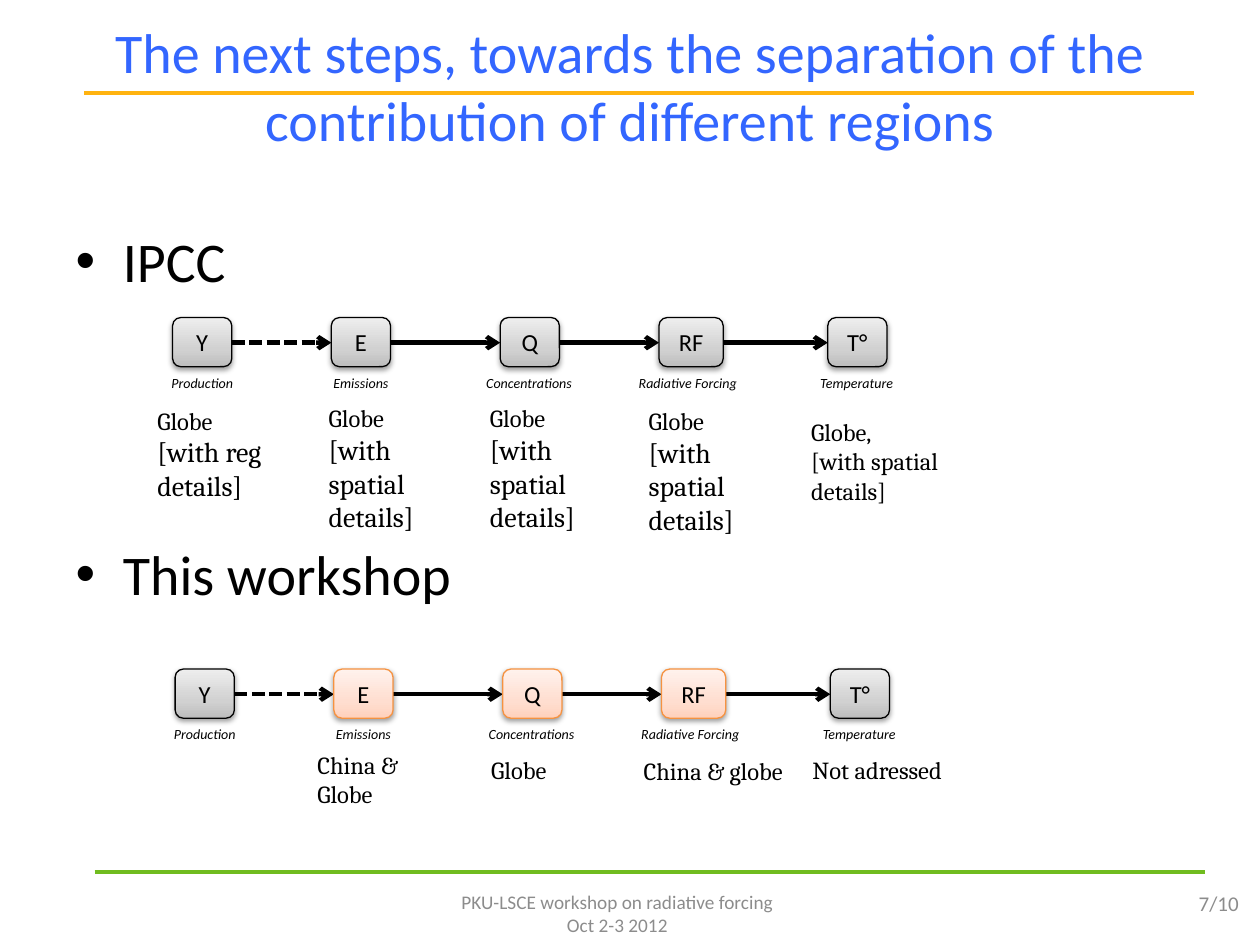
import dataclasses

import lxml.etree
import pptx
import pptx.dml.color
import pptx.enum.dml
import pptx.enum.shapes
import pptx.enum.text
import pptx.oxml.ns
import pptx.util

Inches, Pt = pptx.util.Inches, pptx.util.Pt
Align, Anchor = pptx.enum.text.PP_ALIGN, pptx.enum.text.MSO_ANCHOR
qn = pptx.oxml.ns.qn

HUES = {
    "title": "3366FF", "text": "000000", "foot": "8C8C8C",
    "top": "FFB310", "base": "70BC1F", "edge": "F69240",
}
GREY = ("BDBDBD", "D1D1D1", "EEEEEE")
PEACH = ("FFD2BD", "FFDED0", "FFF2ED")
STOPS = (0, 35, 100)


@dataclasses.dataclass
class Node:
    sign: str
    left: float
    width: float
    label: str
    start: float  # left edge of the label
    span: float   # width of the label


@dataclasses.dataclass
class Note:
    left: float
    top: float
    width: float
    height: float
    lines: tuple
    sizes: tuple = (14, 14)


@dataclasses.dataclass
class Chain:
    shift: float
    top: float
    warm: str  # signs of the nodes drawn in peach


NODES = (
    Node("Y", 1.37, 0.47, "Production", 1.21, 0.79),
    Node("E", 2.63, 0.47, "Emissions", 2.47, 0.79),
    Node("Q", 3.97, 0.47, "Concentrations", 3.73, 0.94),
    Node("RF", 5.23, 0.51, "Radiative Forcing", 4.91, 1.1),
    Node("T°", 6.57, 0.47, "Temperature", 6.33, 0.94),
)
CHAINS = (Chain(0, 2.52, ""), Chain(0.02, 5.31, "E Q RF"))
SPACE = ("Globe", "[with spatial details]")
NOTES = (
    Note(1.15, 3.17, 1.19, 0.94, ("Globe", "[with reg details]"), (14, 16)),
    Note(2.51, 3.15, 1.19, 1.21, SPACE, (14, 16)),
    Note(3.79, 3.15, 1.19, 1.21, SPACE, (14, 16)),
    Note(5.05, 3.17, 1.19, 1.21, SPACE, (14, 16)),
    Note(6.34, 3.26, 1.4, 1.62, ("Globe,", "[with spatial details]")),
    Note(2.42, 5.9, 1.01, 0.71, ("China &", "Globe")),
    Note(3.8, 5.94, 0.81, 0.4, ("Globe",)),
    Note(5.01, 5.95, 1.33, 1.01, ("China & globe",)),
    Note(6.35, 5.94, 1.56, 0.4, ("Not adressed",)),
)


def rgb(hue: str) -> pptx.dml.color.RGBColor:
    return pptx.dml.color.RGBColor.from_string(hue)


def style(para, size: float, hue: str = HUES["text"], face: str = "Calibri",
          align=None, slant: bool = False) -> None:
    para.alignment = align
    font = para.font
    font.size, font.name, font.italic = Pt(size), face, slant
    font.color.rgb = rgb(hue)


def place(shape, left: float, top: float, width: float, height: float) -> None:
    shape.left, shape.top = Inches(left), Inches(top)
    shape.width, shape.height = Inches(width), Inches(height)


def write(slide, area: tuple, lines: tuple, sizes: tuple,
          anchor=Anchor.TOP, **look) -> None:
    frame = slide.shapes.add_textbox(*map(Inches, area)).text_frame
    frame.word_wrap = True
    frame.vertical_anchor = anchor
    frame.text = "\n".join(lines)
    for para, size in zip(frame.paragraphs, sizes):
        style(para, size, **look)


def rule(slide, left: float, right: float, y: float, hue: str,
         width: float):
    line = slide.shapes.add_connector(
        pptx.enum.shapes.MSO_CONNECTOR.STRAIGHT,
        Inches(left), Inches(y), Inches(right), Inches(y))
    line.line.color.rgb = rgb(hue)
    line.line.width = Pt(width)
    lxml.etree.SubElement(line._element.spPr, qn("a:effectLst"))
    return line


def arrow(slide, left: float, right: float, y: float, dash: bool) -> None:
    line = rule(slide, left, right, y, HUES["text"], 2.5).line
    if dash:
        line.dash_style = pptx.enum.dml.MSO_LINE.SQUARE_DOT
        line._ln.find(qn("a:prstDash")).set("val", "sysDash")
    lxml.etree.SubElement(line._ln, qn("a:tailEnd"), type="arrow")


def tint(parent, hue: str):
    return lxml.etree.SubElement(parent, qn("a:srgbClr"), val=hue)


def shade(shape, hues: tuple) -> None:
    shape.fill.gradient()
    shape.fill.gradient_angle = 90
    stops = shape._element.spPr.find(".//" + qn("a:gsLst"))
    for old in list(stops):
        stops.remove(old)
    for stop, hue in zip(STOPS, hues):
        tint(lxml.etree.SubElement(stops, qn("a:gs"), pos=str(stop * 1000)), hue)


def drop(shape) -> None:
    shape.shadow.inherit = False
    shadow = lxml.etree.SubElement(
        shape._element.spPr.find(qn("a:effectLst")), qn("a:outerShdw"),
        blurRad=str(Pt(3.1)), dist=str(Pt(1.6)), dir="5400000", rotWithShape="0")
    lxml.etree.SubElement(tint(shadow, HUES["text"]), qn("a:alpha"), val="38000")


def box(slide, node: Node, chain: Chain) -> None:
    warm = node.sign in chain.warm.split()
    shape = slide.shapes.add_shape(
        pptx.enum.shapes.MSO_SHAPE.FLOWCHART_ALTERNATE_PROCESS,
        Inches(node.left + chain.shift), Inches(chain.top),
        Inches(node.width), Inches(0.39))
    shade(shape, PEACH if warm else GREY)
    shape.line.color.rgb = rgb(HUES["edge" if warm else "text"])
    shape.line.width = Pt(0.75)
    drop(shape)
    frame = shape.text_frame
    frame.text = node.sign
    frame.vertical_anchor = Anchor.MIDDLE
    style(frame.paragraphs[0], 14, align=Align.CENTER)
    write(slide, (node.start + chain.shift, chain.top + 0.4, node.span, 0.22),
          (node.label,), (8,), align=Align.CENTER, slant=True)


def draw(slide, chain: Chain) -> None:
    for one, two in zip(NODES, NODES[1:]):
        arrow(slide, one.left + one.width + chain.shift, two.left + chain.shift,
              chain.top + 0.2, one is NODES[0])
    for node in NODES:
        box(slide, node, chain)


def main() -> None:
    deck = pptx.Presentation()
    deck.slide_width, deck.slide_height = Inches(10), Inches(7.5)
    slide = deck.slides.add_slide(deck.slide_layouts[1])

    # Title and list
    title, body = slide.placeholders
    place(title, 0.5, 0.05, 9, 1.25)
    place(body, 0.5, 1.75, 9, 4.95)
    title.text_frame.text = ("The next steps, towards the separation of the "
                             "contribution of different regions")
    style(title.text_frame.paragraphs[0], 32, HUES["title"], align=Align.CENTER)
    body.text_frame.text = "IPCC\nThis workshop"
    for para, gap in zip(body.text_frame.paragraphs, (0, 140)):
        para.space_before = Pt(gap)
        style(para, 32)
    for shape in (title, body):
        shape.text_frame.auto_size = pptx.enum.text.MSO_AUTO_SIZE.NONE

    # Rules and footer
    rule(slide, 0.67, 9.48, 0.74, HUES["top"], 2.25)
    rule(slide, 0.75, 9.56, 6.92, HUES["base"], 2.25)
    write(slide, (2.8, 7.05, 4.2, 0.4),
          ("PKU-LSCE workshop on radiative forcing", "Oct 2-3 2012"), (11, 11),
          Anchor.MIDDLE, hue=HUES["foot"], align=Align.CENTER)
    write(slide, (7.6, 6.97, 2.33, 0.4), ("7/10",), (12,),
          Anchor.MIDDLE, hue=HUES["foot"], align=Align.RIGHT)

    # Chains and their notes
    for chain in CHAINS:
        draw(slide, chain)
    for note in NOTES:
        write(slide, (note.left, note.top, note.width, note.height),
              note.lines, note.sizes, face="Cambria")

    deck.save("out.pptx")


if __name__ == "__main__":
    main()
